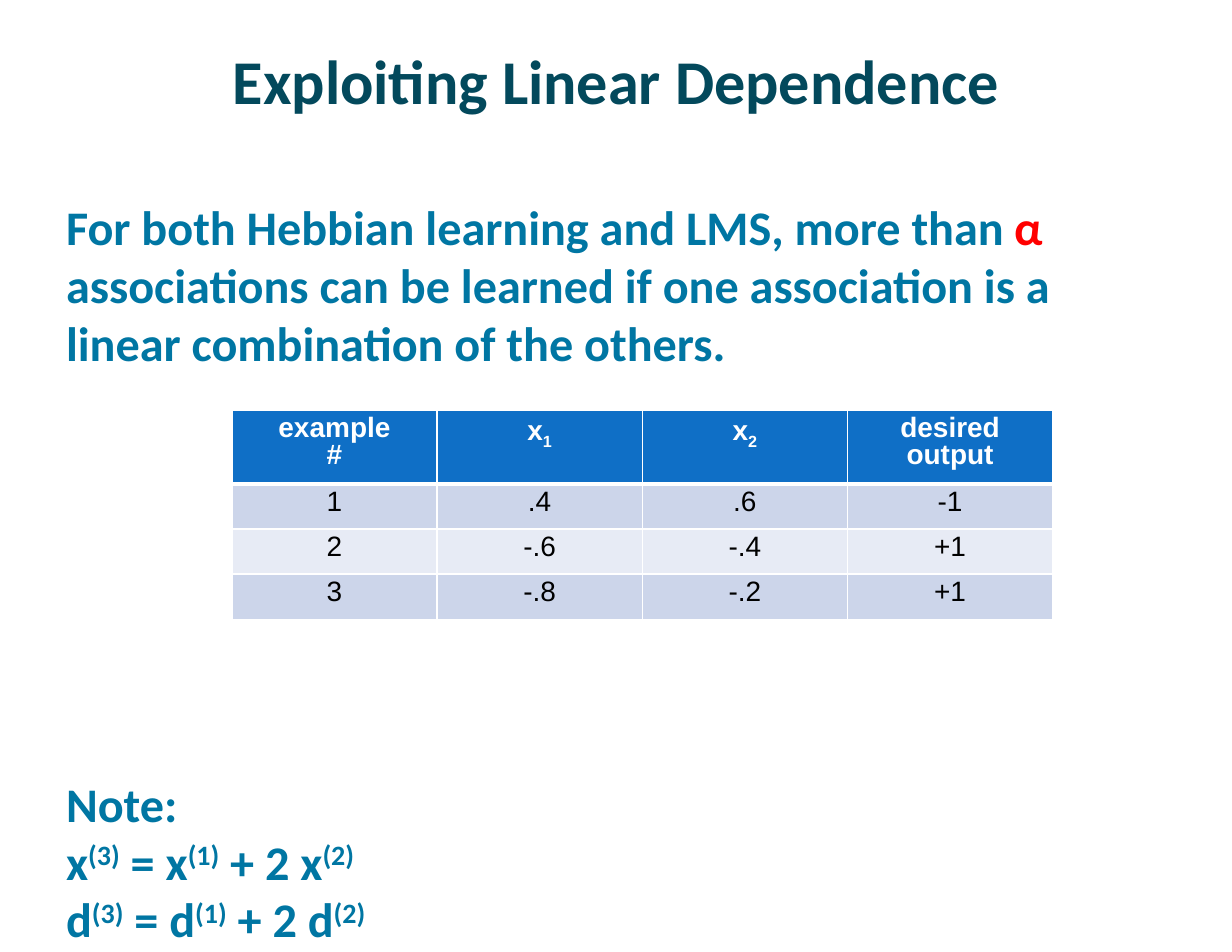
from dataclasses import dataclass

from lxml.etree import SubElement
from pptx import Presentation
from pptx.dml.color import RGBColor as RGB
from pptx.enum.text import MSO_ANCHOR as ANCHOR, PP_ALIGN as ALIGN
from pptx.oxml.ns import qn
from pptx.util import Inches, Pt

COLS, ROWS = 110, 85
PRS_W, PRS_H = Inches(11), Inches(8.5)


@dataclass(frozen=True)
class Theme:
    """Colours, fonts and type sizes of the slide."""
    title: str = "03495C"
    body: str = "0076A3"
    accent: str = "FF0000"
    header: str = "0F6FC6"
    bands: tuple = ("CCD5EA", "E7EBF5")
    white: str = "FFFFFF"
    black: str = "000000"
    text_font: str = "Calibri"
    table_font: str = "Arial"
    title_size: int = 40
    body_size: int = 31
    table_size: int = 18


T = Theme()
INTRO = [[("For both Hebbian learning and LMS, more than ", {}),
          ("α", {"color": T.accent}),
          (" associations can be learned if one association is a "
           "linear combination of the others.", {})]]
HEAD = ["example\v#", ("x", "1"), ("x", "2"), "desired output"]
DATA = [["1", ".4", ".6", "-1"],
        ["2", "-.6", "-.4", "+1"],
        ["3", "-.8", "-.2", "+1"]]


def grid(x, y, w, h):
    """Turn columns and rows of the slide grid into lengths."""
    return (int(PRS_W * x / COLS), int(PRS_H * y / ROWS),
            int(PRS_W * w / COLS), int(PRS_H * h / ROWS))


def add_text(p, text, *, font=T.text_font, size=T.body_size, color=T.body,
             bold=True, base=0):
    """Append text to a paragraph, with \\v as a line break."""
    for i, part in enumerate(text.split("\v")):
        if i:
            p.add_line_break()
        r = p.add_run()
        r.text = part
        r.font.name, r.font.size, r.font.bold = font, Pt(size), bold
        r.font.color.rgb = RGB.from_string(color)
        if base:
            r._r.get_or_add_rPr().set("baseline", str(base * 1000))


def text_box(s, box, paras, align=ALIGN.LEFT, anchor=ANCHOR.TOP, left=0.22):
    """Place paragraphs, each a list of (text, format), in a box."""
    tf = s.shapes.add_textbox(*grid(*box)).text_frame
    tf.word_wrap, tf.vertical_anchor = True, anchor
    tf.margin_left, tf.margin_right = Inches(left), Inches(0.11)
    tf.margin_top = tf.margin_bottom = Inches(0.06)
    for i, runs in enumerate(paras):
        p = tf.add_paragraph() if i else tf.paragraphs[0]
        p.alignment = align
        for text, fmt in runs:
            add_text(p, text, **fmt)


def title(s, box):
    """Place the centred title."""
    fmt = {"size": T.title_size, "color": T.title}
    text_box(s, box, [[("Exploiting Linear Dependence", fmt)]],
             ALIGN.CENTER, ANCHOR.MIDDLE, left=0.11)


def equation(v):
    """Return the runs stating that example 3 combines examples 1 and 2."""
    sup = {"base": 30}
    return [(v, {}), ("(3)", sup), (f" = {v}", {}), ("(1)", sup),
            (f" + 2 {v}", {}), ("(2)", sup)]


def note(s, box):
    """Place the note with its two equations."""
    text_box(s, box, [[("Note:", {})], equation("x"), equation("d")])


def border(cell, bottom):
    """Draw white cell borders, the bottom one of the given width."""
    tc_pr = cell._tc.get_or_add_tcPr()
    for i, (side, width) in enumerate(
            {"L": 1, "R": 1, "T": 1, "B": bottom}.items()):
        ln = SubElement(tc_pr, qn(f"a:ln{side}"), w=str(Pt(width)))
        fill = SubElement(ln, qn("a:solidFill"))
        SubElement(fill, qn("a:srgbClr"), val=T.white)
        tc_pr.remove(ln)
        tc_pr.insert(i, ln)


def examples(s, box, head_rows=6.6):
    """Place the table of examples, with a taller header row."""
    x, y, w, h = grid(*box)
    rows = [HEAD] + DATA
    tbl = s.shapes.add_table(len(rows), len(HEAD), x, y, w, h).table
    head_h = grid(0, 0, 0, head_rows)[3]
    for col in tbl.columns:
        col.width = w // len(HEAD)
    for i, values in enumerate(rows):
        head = i == 0
        tbl.rows[i].height = head_h if head else (h - head_h) // len(DATA)
        for j, value in enumerate(values):
            cell = tbl.cell(i, j)
            cell.fill.solid()
            cell.fill.fore_color.rgb = RGB.from_string(
                T.header if head else T.bands[(i - 1) % 2])
            border(cell, 3 if head else 1)
            p = cell.text_frame.paragraphs[0]
            p.alignment, p.line_spacing = ALIGN.CENTER, 0.87
            parts = (value,) if isinstance(value, str) else value
            for k, text in enumerate(parts):
                add_text(p, text, font=T.table_font, size=T.table_size,
                         color=T.white if head else T.black, bold=head,
                         base=-25 * k)


def main():
    """Build the slide and save it."""
    prs = Presentation()
    prs.slide_width, prs.slide_height = PRS_W, PRS_H
    s = prs.slides.add_slide(prs.slide_layouts[6])
    title(s, (5.5, 1.9, 99, 10.4))
    text_box(s, (3.7, 17, 100.8, 17), INTRO)
    examples(s, (20.7, 36.6, 73.3, 18.7))
    note(s, (3.7, 68.5, 100.8, 16.5))
    prs.save("out.pptx")


if __name__ == "__main__":
    main()
